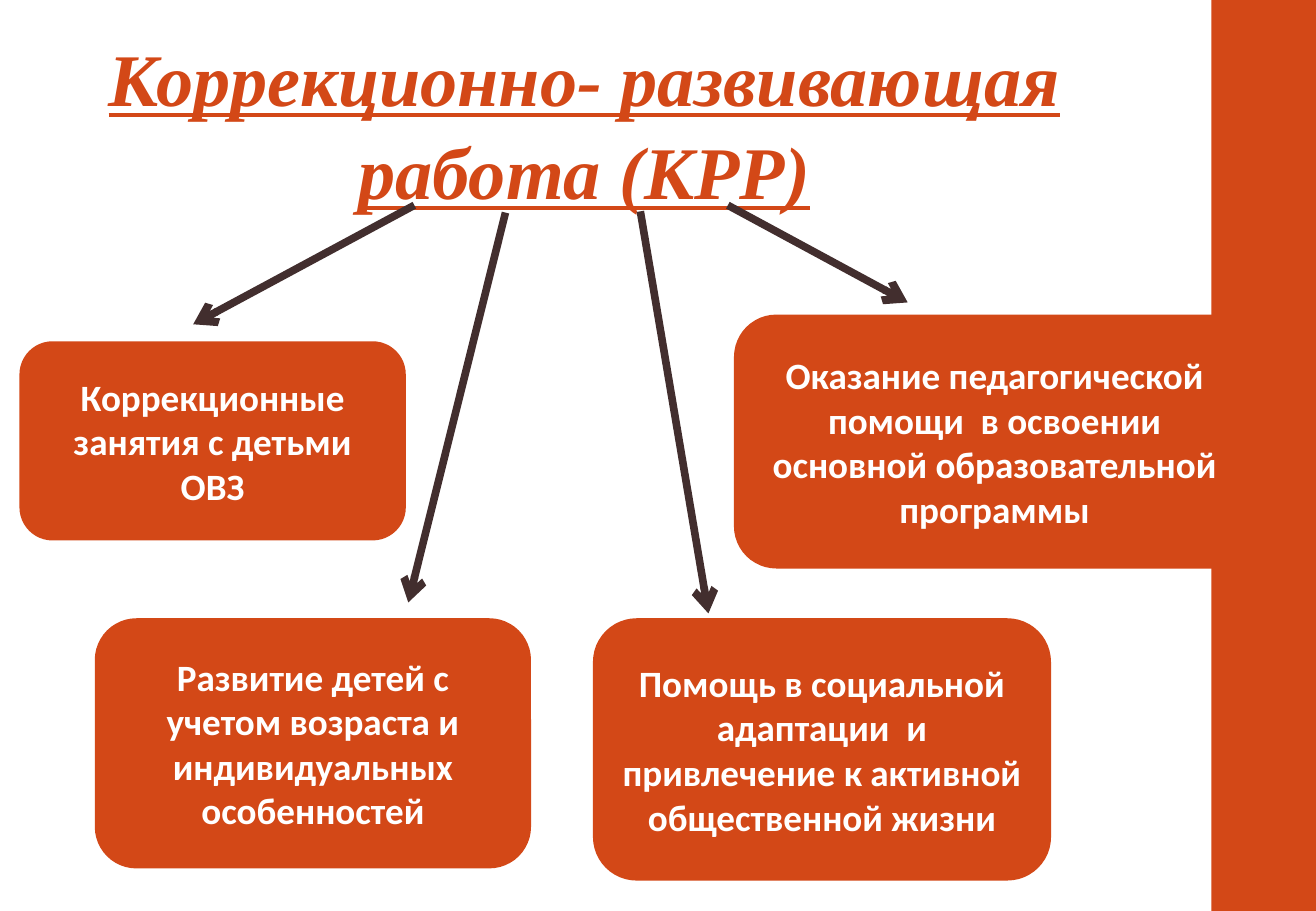
import pptx
import pptx.util
import pptx.dml.color
import pptx.enum.shapes
import pptx.enum.text
import pptx.oxml.ns
import lxml.etree

# Content: lengths in px, 100 px to the inch
PAGE_SIZE = (1083, 750)
COLORS = {"accent": "D34817", "arrow": "422E2E", "white": "FFFFFF"}
SIDE_BAND = (997, 0, 87, 750)
TITLE = ("Коррекционно- развивающая работа (КРР)", (44, 18, 874, 158))
CARDS = [
    ("Коррекционные занятия с детьми ОВЗ", (16, 281, 318, 164)),
    ("Оказание педагогической помощи  в освоении основной образовательной программы",
     (604, 259, 429, 209)),
    ("Развитие детей с учетом возраста и индивидуальных особенностей",
     (78, 509, 359, 206)),
    ("Помощь в социальной адаптации  и привлечение к активной общественной жизни",
     (488, 509, 377, 216)),
]
ARROWS = [
    (341, 169, 159, 267),
    (416, 175, 336, 496),
    (527, 174, 583, 505),
    (599, 169, 747, 249),
]

PX = 9144


def emu(lengths):
    return [length * PX for length in lengths]


def color(name):
    return pptx.dml.color.RGBColor.from_string(COLORS[name])


def write(shape, text, font_name, size, color_name):
    shape.text_frame.word_wrap = True
    para = shape.text_frame.paragraphs[0]
    para.text = text
    para.alignment = pptx.enum.text.PP_ALIGN.CENTER
    para.font.name = font_name
    para.font.size = pptx.util.Pt(size)
    para.font.bold = True
    para.font.color.rgb = color(color_name)
    return para


def add_block(page, kind, place):
    block = page.shapes.add_shape(kind, *emu(place))
    block.shadow.inherit = False
    block.fill.solid()
    block.fill.fore_color.rgb = color("accent")
    block.line.fill.background()
    return block


def add_arrow(page, ends):
    arrow = page.shapes.add_connector(
        pptx.enum.shapes.MSO_CONNECTOR.STRAIGHT, *emu(ends))
    arrow.line.color.rgb = color("arrow")
    arrow.line.width = pptx.util.Pt(4.5)
    qn = pptx.oxml.ns.qn
    properties = arrow.element.spPr
    line = properties.find(qn("a:ln"))
    lxml.etree.SubElement(line, qn("a:tailEnd"), type="arrow")
    lxml.etree.SubElement(properties, qn("a:effectLst"))


def main():
    deck = pptx.Presentation()
    deck.slide_width, deck.slide_height = emu(PAGE_SIZE)
    page = deck.slides.add_slide(deck.slide_layouts[6])
    kinds = pptx.enum.shapes.MSO_SHAPE

    # Side band
    add_block(page, kinds.RECTANGLE, SIDE_BAND)

    # Title
    text, place = TITLE
    box = page.shapes.add_textbox(*emu(place))
    para = write(box, text, "Times New Roman", 44, "accent")
    para.font.italic = True
    para.font.underline = True
    para.line_spacing = 1.05

    # Cards
    for text, place in CARDS:
        card = add_block(page, kinds.ROUNDED_RECTANGLE, place)
        card.text_frame.vertical_anchor = pptx.enum.text.MSO_ANCHOR.MIDDLE
        write(card, text, "Calibri", 22, "white")

    # Arrows from the title to the cards
    for ends in ARROWS:
        add_arrow(page, ends)

    deck.save("out.pptx")


if __name__ == "__main__":
    main()
